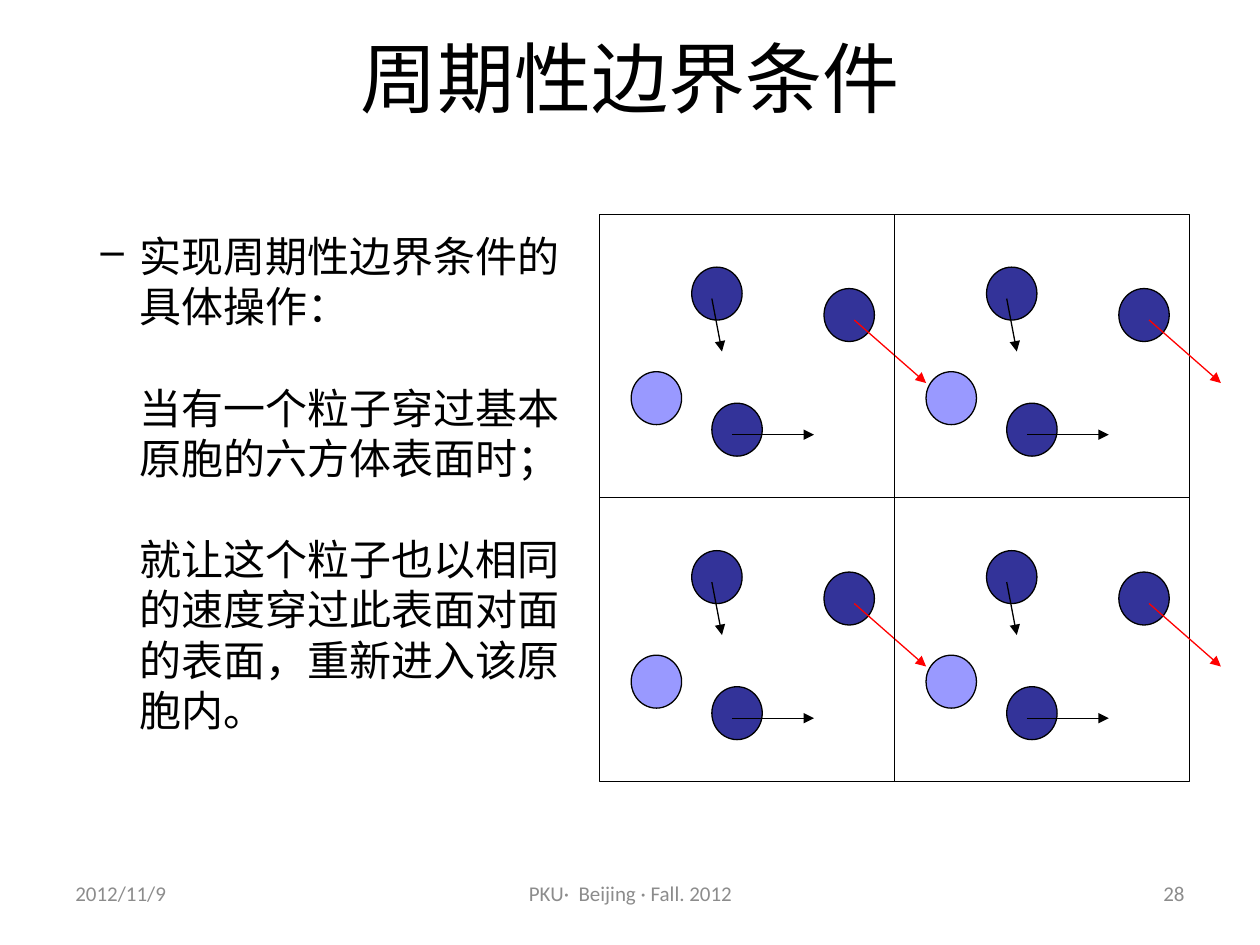
"""Build the slide on periodic boundary conditions."""
import pptx
import pptx.dml.color
import pptx.enum.shapes
import pptx.enum.text
import pptx.oxml
import pptx.oxml.ns
import pptx.util
from lxml import etree

Inches, Pt = pptx.util.Inches, pptx.util.Pt
PP_ALIGN, MSO_ANCHOR = pptx.enum.text.PP_ALIGN, pptx.enum.text.MSO_ANCHOR
MSO_SHAPE = pptx.enum.shapes.MSO_SHAPE
qn = pptx.oxml.ns.qn

THEME = {
    "font": "Calibri",
    "ink": "000000", "footer": "8C8C8C",
    "particle": "333399", "entering": "9999FF", "leaving": "FF0000",
    "title_size": 44, "body_size": 24, "footer_size": 12, "line": 0.75,
}

TITLE = "周期性边界条件"
BODY = [
    "实现周期性边界条件的具体操作：",
    "当有一个粒子穿过基本原胞的六方体表面时；",
    "就让这个粒子也以相同的速度穿过此表面对面的表面，重新进入该原胞内。",
]
FOOTERS = [
    ("2012/11/9", 0.5, 2.33, PP_ALIGN.LEFT),
    ("PKU·  Beijing · Fall. 2012", 3.42, 3.17, PP_ALIGN.CENTER),
    ("28", 7.17, 2.33, PP_ALIGN.RIGHT),
]

GRID_LEFT, GRID_TOP, ROWS, COLS = 4.76, 1.7, 2, 2
CELL_W, CELL_H = 2.34, 2.25
PARTICLE_W, PARTICLE_H = 0.4, 0.42
PARTICLES = [
    (0.73, 0.42, "particle"),
    (0.89, 1.5, "particle"),
    (1.78, 0.59, "particle"),
    (0.25, 1.25, "entering"),
]
VELOCITIES = [
    (2.02, 0.84, 2.59, 1.34, "leaving"),
    (0.89, 0.67, 0.97, 1.09, "ink"),
    (1.05, 1.75, 1.7, 1.75, "ink"),
]


def color(name):
    """Return a theme colour."""
    return pptx.dml.color.RGBColor.from_string(THEME[name])


def add_text(s, paragraphs, box, size, ink="ink", align=PP_ALIGN.LEFT,
             anchor=MSO_ANCHOR.MIDDLE, gap=0, indent=None, bullet=None):
    """Add a text box; the bullet marks its first paragraph."""
    sp = s.shapes.add_textbox(*map(Inches, box))
    tf = sp.text_frame
    tf.word_wrap = True
    tf.vertical_anchor = anchor
    for i, text in enumerate(paragraphs):
        p = tf.paragraphs[0] if i == 0 else tf.add_paragraph()
        p.alignment = align
        p.space_before = Pt(gap if i else 0)
        r = p.add_run()
        r.text = text
        r.font.name = THEME["font"]
        r.font.size = Pt(THEME[size])
        r.font.color.rgb = color(ink)
        pPr = p._p.get_or_add_pPr()
        if indent:
            left, hanging = indent
            pPr.set("marL", str(Inches(left)))
            pPr.set("indent", str(Inches(hanging if i == 0 else 0)))
        if bullet and i == 0:
            etree.SubElement(pPr, qn("a:buChar"), char=bullet)
    return sp


def add_outlined(group, kind, box, fill=None):
    """Add a preset shape with a thin outline to the group."""
    sp = group.shapes.add_shape(kind, *map(Inches, box))
    sp.shadow.inherit = False
    if fill:
        sp.fill.solid()
        sp.fill.fore_color.rgb = color(fill)
    else:
        sp.fill.background()
    sp.line.color.rgb = color("ink")
    sp.line.width = Pt(THEME["line"])


def add_arrow(group, ends, ink):
    """Add a velocity arrow to the group."""
    c = group.shapes.add_connector(
        pptx.enum.shapes.MSO_CONNECTOR.STRAIGHT, *map(Inches, ends))
    c.line.color.rgb = color(ink)
    c.line.width = Pt(THEME["line"])
    spPr = c.element.spPr
    etree.SubElement(spPr.find(qn("a:ln")), qn("a:tailEnd"), type="triangle")
    etree.SubElement(spPr, qn("a:effectLst"))


def add_cell(s, x, y):
    """Add one periodic cell with its particles and velocities."""
    group = s.shapes.add_group_shape()
    add_outlined(group, MSO_SHAPE.RECTANGLE, (x, y, CELL_W, CELL_H))
    for dx, dy, fill in PARTICLES:
        add_outlined(group, MSO_SHAPE.OVAL,
                     (x + dx, y + dy, PARTICLE_W, PARTICLE_H), fill)
    for x1, y1, x2, y2, ink in VELOCITIES:
        add_arrow(group, (x + x1, y + y1, x + x2, y + y2), ink)


def main():
    """Assemble and save the slide."""
    prs = pptx.Presentation()
    prs.slide_width, prs.slide_height = Inches(10), Inches(7.5)
    s = prs.slides.add_slide(prs.slide_layouts[6])
    add_text(s, [TITLE], (0.5, 0.3, 9, 0.61), "title_size",
             align=PP_ALIGN.CENTER)
    add_text(s, BODY, (0.2, 1.78, 4.42, 5.15), "body_size",
             anchor=MSO_ANCHOR.TOP, gap=29, indent=(0.81, -0.31), bullet="–")
    for row in range(ROWS):
        for col in range(COLS):
            add_cell(s, GRID_LEFT + col * CELL_W, GRID_TOP + row * CELL_H)
    for text, left, width, align in FOOTERS:
        add_text(s, [text], (left, 6.83, width, 0.52), "footer_size",
                 ink="footer", align=align)
    prs.save("out.pptx")


if __name__ == "__main__":
    main()
